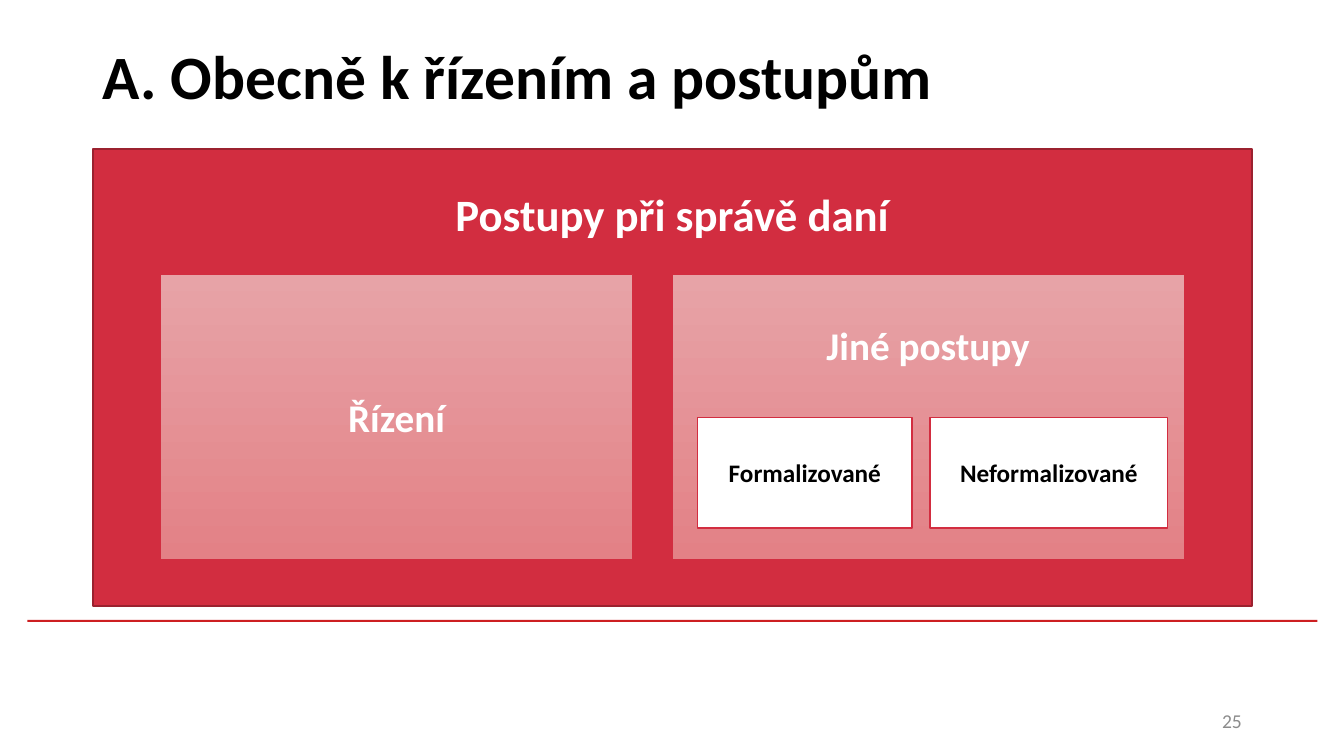
import pptx
import pptx.util
import pptx.dml.color
import pptx.enum.shapes
import pptx.enum.text

Cm, Pt = pptx.util.Cm, pptx.util.Pt
RGB = pptx.dml.color.RGBColor
ALIGN = pptx.enum.text.PP_ALIGN
ANCHOR = pptx.enum.text.MSO_ANCHOR

RED = RGB(0xD2, 0x2D, 0x40)
DARK = RGB(0x9B, 0x21, 0x2F)
RULE = RGB(0xCD, 0x1F, 0x21)
PINK = RGB(0xE7, 0xA3, 0xA7)
ROSE = RGB(0xE3, 0x81, 0x86)
WHITE = RGB(0xFF, 0xFF, 0xFF)
BLACK = RGB(0, 0, 0)
GREY = RGB(0x8C, 0x8C, 0x8C)

LEFT, WIDTH = 2.34, 29.21


def write(frame, text, size, color, align, bold=True):
    frame.text = text
    frame.word_wrap = True
    frame.auto_size = pptx.enum.text.MSO_AUTO_SIZE.NONE
    frame.vertical_anchor = ANCHOR.MIDDLE
    para = frame.paragraphs[0]
    para.alignment = align
    font = para.runs[0].font
    font.name, font.size, font.bold = "Calibri", Pt(size), bold
    font.color.rgb = color


def add_rect(slide, area, fill, line=None, width=1):
    """Add a rectangle; a pair of colours as fill gives a downward gradient."""
    rect = slide.shapes.add_shape(
        pptx.enum.shapes.MSO_SHAPE.RECTANGLE, *map(Cm, area))
    rect.shadow.inherit = False
    if isinstance(fill, list):
        rect.fill.gradient()
        rect.fill.gradient_angle = 270
        for stop, color in zip(rect.fill.gradient_stops, fill):
            stop.color.rgb = color
    else:
        rect.fill.solid()
        rect.fill.fore_color.rgb = fill
    if line is None:
        rect.line.fill.background()
    else:
        rect.line.color.rgb = line
        rect.line.width = Pt(width)
    return rect


def add_head(rect, text, size, inset):
    """Write a heading at the top of a box that holds other boxes."""
    frame = rect.text_frame
    write(frame, text, size, WHITE, ALIGN.CENTER)
    frame.vertical_anchor = ANCHOR.TOP
    frame.margin_top = Cm(inset)


def set_title(slide, text):
    title = slide.shapes.title
    title.left, title.top = Cm(LEFT), Cm(0.05)
    title.width, title.height = Cm(WIDTH), Cm(3.68)
    write(title.text_frame, text, 44, BLACK, ALIGN.LEFT)


def add_page(slide, text):
    box = slide.shapes.add_textbox(Cm(23.93), Cm(17.65), Cm(7.62), Cm(1.02))
    write(box.text_frame, text, 14, GREY, ALIGN.RIGHT, bold=False)


def main():
    deck = pptx.Presentation()
    deck.slide_width, deck.slide_height = Cm(33.87), Cm(19.05)
    slide = deck.slides.add_slide(deck.slide_layouts[5])

    add_rect(slide, (0.69, 15.62, 32.51, 0.05), RULE)
    set_title(slide, "A. Obecně k řízením a postupům")
    add_page(slide, "25")

    panel = add_rect(slide, (LEFT, 3.76, WIDTH, 11.51), RED, DARK)
    add_head(panel, "Postupy při správě daní", 32, 0.95)

    shade = [PINK, ROSE]
    formal = add_rect(slide, (4.04, 6.91, 11.91, 7.19), shade, RED, 0.5)
    write(formal.text_frame, "Řízení", 28, WHITE, ALIGN.CENTER)
    other = add_rect(slide, (16.94, 6.91, 12.9, 7.19), shade, RED, 0.5)
    add_head(other, "Jiné postupy", 28, 1.18)

    for text, left, width in (("Formalizované", 17.58, 5.41),
                              ("Neformalizované", 23.44, 5.99)):
        kind = add_rect(slide, (left, 10.52, width, 2.79), WHITE, RED)
        write(kind.text_frame, text, 18, BLACK, ALIGN.CENTER)

    deck.save("out.pptx")


if __name__ == "__main__":
    main()
